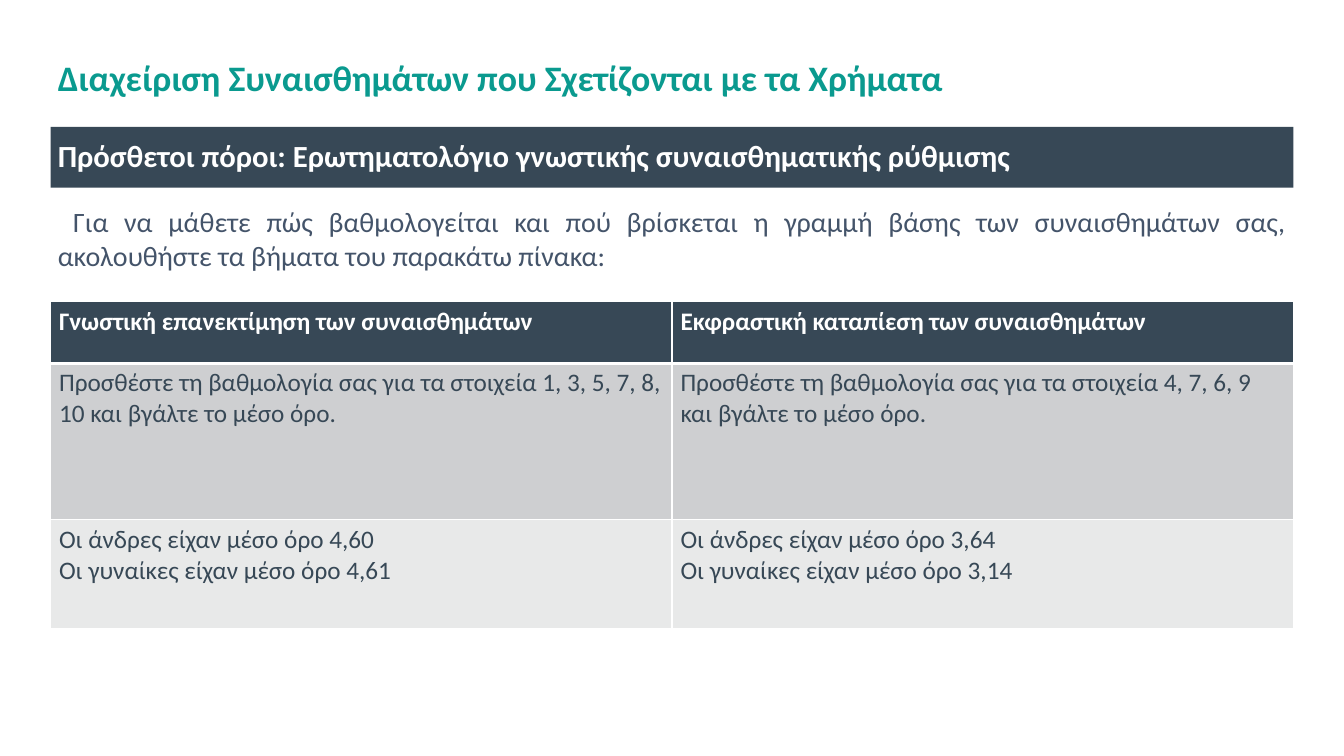
from lxml import etree
from pptx import Presentation
from pptx.dml.color import RGBColor
from pptx.enum.shapes import MSO_SHAPE
from pptx.enum.text import MSO_ANCHOR, PP_ALIGN
from pptx.oxml.ns import qn
from pptx.util import Pt

RECTANGLE = MSO_SHAPE.RECTANGLE
TOP, MIDDLE = MSO_ANCHOR.TOP, MSO_ANCHOR.MIDDLE
LEFT, JUSTIFY = PP_ALIGN.LEFT, PP_ALIGN.JUSTIFY

THEME = {
    "font": "Calibri",
    "teal": "0A9A8F",
    "navy": "374856",
    "slate": "44546A",
    "white": "FFFFFF",
    "row_fills": ["374856", "CECFD1", "E8E9E9"],
    "title_size": 28,
    "banner_size": 24,
    "body_size": 21.9,
    "table_size": 19.7,
}
TEXT_MARGINS = {
    "margin_left": Pt(5.7),
    "margin_right": Pt(5.7),
    "margin_top": Pt(3.6),
    "margin_bottom": Pt(3.6),
}
CELL_MARGINS = {**TEXT_MARGINS, "margin_left": Pt(6.7), "margin_right": Pt(6.7)}
SIDE, CONTENT_WIDTH = 39.5, 971


def write_text(frame, lines, size, color, bold=False, align=LEFT, spacing=1.0):
    frame.word_wrap = True
    for index, line in enumerate(lines):
        paragraph = frame.paragraphs[0] if index == 0 else frame.add_paragraph()
        paragraph.alignment = align
        paragraph.line_spacing = spacing
        run = paragraph.add_run()
        run.text = line
        run.font.color.rgb = RGBColor.from_string(color)
        font_format = {"name": THEME["font"], "size": Pt(size), "bold": bold}
        for name, value in font_format.items():
            setattr(run.font, name, value)


def add_border(cell, side, width):
    properties = cell._tc.get_or_add_tcPr()
    line = etree.Element(qn(f"a:ln{side}"), w=str(Pt(width)))
    fill = etree.SubElement(line, qn("a:solidFill"))
    etree.SubElement(fill, qn("a:srgbClr"), val=THEME["white"])
    properties.insert("LRTB".index(side), line)


presentation = Presentation()
presentation.slide_width = Pt(1050)
presentation.slide_height = Pt(591)
slide = presentation.slides.add_slide(presentation.slide_layouts[6])

text_blocks = [
    {
        "top": 156.24, "height": 403.92, "fill": None, "anchor": TOP,
        "indent": 12,
        "text": {
            "lines": [
                "Για να μάθετε πώς βαθμολογείται και πού βρίσκεται η γραμμή βάσης "
                "των συναισθημάτων σας, ακολουθήστε τα βήματα του παρακάτω πίνακα:"
            ],
            "size": THEME["body_size"], "color": THEME["slate"], "align": JUSTIFY,
        },
    },
    {
        "top": 33.84, "height": 56.88, "fill": None, "anchor": MIDDLE,
        "indent": 0,
        "text": {
            "lines": ["Διαχείριση Συναισθημάτων που Σχετίζονται με τα Χρήματα"],
            "size": THEME["title_size"], "color": THEME["teal"],
            "bold": True, "spacing": 0.9,
        },
    },
    {
        "top": 99.2, "height": 47.52, "fill": THEME["navy"], "anchor": MIDDLE,
        "indent": 0,
        "text": {
            "lines": ["Πρόσθετοι πόροι: Ερωτηματολόγιο γνωστικής συναισθηματικής ρύθμισης"],
            "size": THEME["banner_size"], "color": THEME["white"],
            "bold": True, "align": JUSTIFY, "spacing": 0.9,
        },
    },
]
for block in text_blocks:
    bounds = [Pt(value) for value in (SIDE, block["top"], CONTENT_WIDTH, block["height"])]
    if block["fill"]:
        shape = slide.shapes.add_shape(RECTANGLE, *bounds)
        shape.shadow.inherit = False
        shape.fill.solid()
        shape.fill.fore_color.rgb = RGBColor.from_string(block["fill"])
        shape.line.fill.background()
    else:
        shape = slide.shapes.add_textbox(*bounds)
    frame = shape.text_frame
    for name, value in {**TEXT_MARGINS, "vertical_anchor": block["anchor"]}.items():
        setattr(frame, name, value)
    write_text(frame, **block["text"])
    if block["indent"]:
        paragraph_properties = frame.paragraphs[0]._p.get_or_add_pPr()
        paragraph_properties.set("indent", str(Pt(block["indent"])))

table_rows = [
    [
        ["Γνωστική επανεκτίμηση των συναισθημάτων"],
        ["Εκφραστική καταπίεση των συναισθημάτων"],
    ],
    [
        ["Προσθέστε τη βαθμολογία σας για τα στοιχεία 1, 3, 5, 7, 8, 10 και βγάλτε το μέσο όρο."],
        ["Προσθέστε τη βαθμολογία σας για τα στοιχεία 4, 7, 6, 9 και βγάλτε το μέσο όρο."],
    ],
    [
        ["Οι άνδρες είχαν μέσο όρο 4,60", "Οι γυναίκες είχαν μέσο όρο 4,61"],
        ["Οι άνδρες είχαν μέσο όρο 3,64", "Οι γυναίκες είχαν μέσο όρο 3,14"],
    ],
]
row_heights = [48.24, 122.4, 84.96]
table = slide.shapes.add_table(
    len(table_rows), 2, Pt(SIDE), Pt(235.8), Pt(CONTENT_WIDTH), Pt(sum(row_heights))
).table
for column in table.columns:
    column.width = Pt(CONTENT_WIDTH / 2)
for row_index, row in enumerate(table_rows):
    table.rows[row_index].height = Pt(row_heights[row_index])
    is_header = row_index == 0
    text_color = THEME["white"] if is_header else THEME["navy"]
    border_widths = {"L": 1, "R": 1, "T": 1, "B": 3 if is_header else 1}
    for column_index, lines in enumerate(row):
        cell = table.cell(row_index, column_index)
        cell.fill.solid()
        cell.fill.fore_color.rgb = RGBColor.from_string(THEME["row_fills"][row_index])
        for name, value in {**CELL_MARGINS, "vertical_anchor": TOP}.items():
            setattr(cell, name, value)
        write_text(cell.text_frame, lines, THEME["table_size"], text_color, bold=is_header)
        for side, width in border_widths.items():
            add_border(cell, side, width)

presentation.save("out.pptx")
